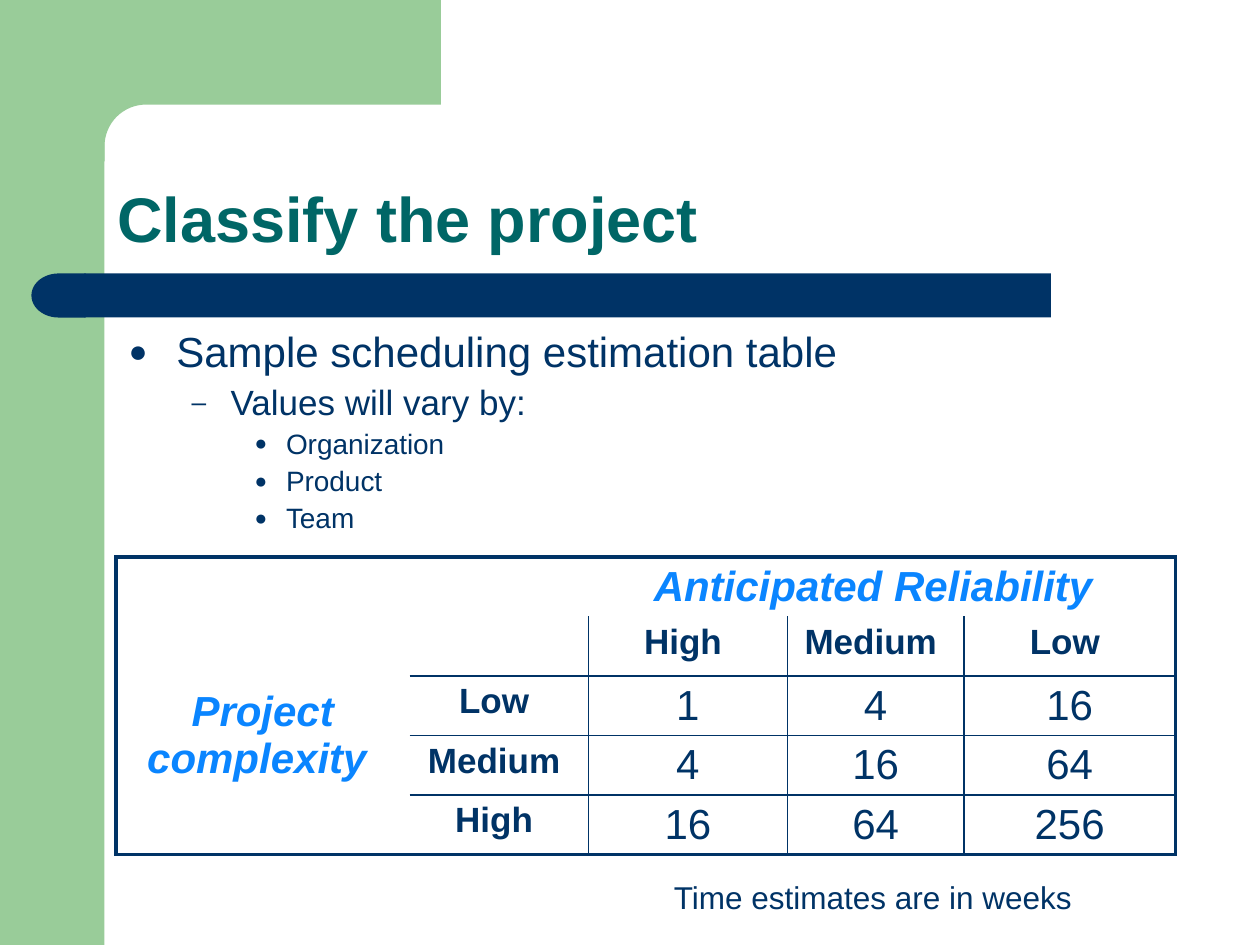
import math
from dataclasses import dataclass

from lxml import etree
from pptx import Presentation
from pptx import util as u
from pptx.dml import color
from pptx.enum import shapes, text
from pptx.oxml import ns

Inches, Pt = u.Inches, u.Pt


@dataclass(frozen=True)
class Theme:
    font: str = "Arial"
    navy: str = "003366"
    teal: str = "006666"
    green: str = "99CC99"
    blue: str = "0A85FF"
    title: int = 36
    large: int = 24
    medium: int = 20
    note: int = 18
    small: int = 16
    frame: float = 2.25
    grid: float = 1


T = Theme()


def rgb(value):
    return color.RGBColor.from_string(value)


def add_run(p, words, size, tint=T.navy, bold=False, italic=False):
    r = p.add_run()
    r.text = words
    f = r.font
    f.name, f.size, f.bold, f.italic = T.font, Pt(size), bold, italic
    f.color.rgb = rgb(tint)


def place(sp, box):
    sp.left, sp.top, sp.width, sp.height = (Inches(v) for v in box)


def paint(sp, tint):
    sp.shadow.inherit = False
    sp.fill.solid()
    sp.fill.fore_color.rgb = rgb(tint)
    sp.line.fill.background()


def add_corner(s, box, band, radius):
    left, top, width, height = box
    right, bottom = left + width, top + height
    inner_x, inner_y = left + band, top + 0.83
    steps = 16
    arc = []
    for i in range(steps + 1):
        a = math.pi / 2 * i / steps
        arc.append((inner_x + radius * (1 - math.sin(a)),
                    inner_y + radius * (1 - math.cos(a))))
    points = [(right, top), (right, inner_y), *arc,
              (inner_x, bottom), (left, bottom), (left, top)]
    builder = s.shapes.build_freeform(
        Inches(points[0][0]), Inches(points[0][1]))
    builder.add_line_segments(
        [(Inches(x), Inches(y)) for x, y in points[1:]], close=True)
    return builder.convert_to_shape()


def add_backdrop(s, box):
    left, top, width, height = box
    kind = shapes.MSO_SHAPE
    parts = []
    for preset, area, tint in (
        (kind.RECTANGLE, (left, top, 0.83, height), T.green),
        (kind.RECTANGLE, (left + 0.67, top + 2.17, 7.67, 0.35), T.navy),
        (kind.FLOWCHART_DELAY, (left + 0.25, top + 2.17, 0.43, 0.35), T.navy),
    ):
        sp = s.shapes.add_shape(preset, *(Inches(v) for v in area))
        paint(sp, tint)
        parts.append(sp)
    parts[-1].element.spPr.find(ns.qn("a:xfrm")).set("flipH", "1")
    corner = add_corner(s, (left + 0.5, top, 3, 1.28), 0.33, 0.33)
    paint(corner, T.green)
    parts.insert(1, corner)
    tree = s.shapes.element
    for i, sp in enumerate(parts):
        tree.insert(2 + i, sp.element)


def add_title(s, box):
    sp = s.shapes.title
    place(sp, box)
    tf = sp.text_frame
    tf.auto_size = text.MSO_AUTO_SIZE.NONE
    tf.vertical_anchor = text.MSO_ANCHOR.BOTTOM
    p = tf.paragraphs[0]
    p.alignment = text.PP_ALIGN.LEFT
    p.line_spacing = 0.9
    add_run(p, "Classify the project", T.title, T.teal, bold=True)


def set_bullet(p, mark, indent, hang):
    pPr = p._p.get_or_add_pPr()
    pPr.set("marL", str(Inches(indent)))
    pPr.set("indent", str(-Inches(hang)))
    tint = etree.SubElement(pPr, ns.qn("a:buClr"))
    etree.SubElement(tint, ns.qn("a:srgbClr"), val=T.navy)
    etree.SubElement(pPr, ns.qn("a:buSzPct"), val="75000")
    etree.SubElement(pPr, ns.qn("a:buFont"), typeface=T.font)
    etree.SubElement(pPr, ns.qn("a:buChar"), char=mark)


def add_body(s, box):
    sp = s.placeholders[1]
    place(sp, box)
    tf = sp.text_frame
    tf.auto_size = text.MSO_AUTO_SIZE.NONE
    levels = [("●", 0.38, 0.38, T.large),
              ("–", 0.81, 0.31, T.medium),
              ("●", 1.25, 0.25, T.small)]
    items = [(0, "Sample scheduling estimation table"),
             (1, "Values will vary by:"),
             (2, "Organization"), (2, "Product"), (2, "Team")]
    for i, (level, words) in enumerate(items):
        mark, indent, hang, size = levels[level]
        p = tf.add_paragraph() if i else tf.paragraphs[0]
        p.level = level
        set_bullet(p, mark, indent, hang)
        p.line_spacing = 0.9
        p.space_before = Pt(size * 0.25 if i else 0)
        add_run(p, words, size)


def set_borders(cell, widths):
    tcPr = cell._tc.get_or_add_tcPr()
    for i, (side, width) in enumerate(widths.items()):
        ln = etree.Element(ns.qn(f"a:ln{side}"), w=str(Pt(width)))
        if width:
            fill = etree.SubElement(ln, ns.qn("a:solidFill"))
            etree.SubElement(fill, ns.qn("a:srgbClr"), val=T.navy)
        else:
            etree.SubElement(ln, ns.qn("a:noFill"))
        tcPr.insert(i, ln)


def border_widths(cell, row, col, rows, cols):
    bottom, right = row + cell.span_height, col + cell.span_width
    inner = T.grid if row and col else 0
    return {
        "L": T.frame if col == 0 else inner if col > 1 else 0,
        "R": T.frame if right == cols else inner,
        "T": T.frame if row == 0 else inner if row > 1 else 0,
        "B": T.frame if bottom == rows else inner,
    }


def fill_cell(cell, words, size, **style):
    p = cell.text_frame.paragraphs[0]
    p.alignment = text.PP_ALIGN.CENTER
    add_run(p, words, size, **style)


def add_estimates(s, box):
    widths = [2.33, 1.42, 1.58, 1.4, 1.68]
    grades = ["High ", "Medium ", "Low "]
    values = [[1, 4, 16], [4, 16, 64], [16, 64, 256]]
    rows, cols = 5, len(widths)
    table = s.shapes.add_table(
        rows, cols, *(Inches(v) for v in box)).table
    table.first_row = table.horz_banding = False
    for column, width in zip(table.columns, widths):
        column.width = Inches(width)
    for row in table.rows:
        row.height = Inches(box[3] / rows)

    heading, side = table.cell(0, 1), table.cell(1, 0)
    heading.merge(table.cell(0, cols - 1))
    side.merge(table.cell(rows - 1, 0))
    heading.margin_left = Inches(1.38)
    side.vertical_anchor = text.MSO_ANCHOR.MIDDLE
    axis = dict(tint=T.blue, bold=True, italic=True)
    fill_cell(heading, "Anticipated Reliability", T.large, **axis)
    fill_cell(side, "Project complexity ", T.large, **axis)
    for i, grade in enumerate(grades):
        fill_cell(table.cell(1, 2 + i), grade, T.medium, bold=True)
        fill_cell(table.cell(4 - i, 1), grade, T.medium, bold=True)
        for j, value in enumerate(values[i]):
            fill_cell(table.cell(2 + i, 2 + j), str(value), T.large)
    for r in range(rows):
        for c in range(cols):
            cell = table.cell(r, c)
            cell.fill.background()
            set_borders(cell, border_widths(cell, r, c, rows, cols))


def add_note(s, box):
    tf = s.shapes.add_textbox(*(Inches(v) for v in box)).text_frame
    tf.word_wrap = False
    add_run(tf.paragraphs[0], "Time estimates are in weeks", T.note)


def main():
    prs = Presentation()
    prs.slide_width, prs.slide_height = Inches(10), Inches(7.5)
    s = prs.slides.add_slide(prs.slide_layouts[1])
    add_backdrop(s, (0, 0, 10, 7.5))
    add_title(s, (0.83, 0.83, 8.67, 1.25))
    add_body(s, (0.92, 2.58, 8.41, 1.25))
    add_estimates(s, (0.92, 4.42, 8.41, 2.36))
    add_note(s, (5.25, 6.92, 3.46, 0.4))
    prs.save("out.pptx")


if __name__ == "__main__":
    main()
